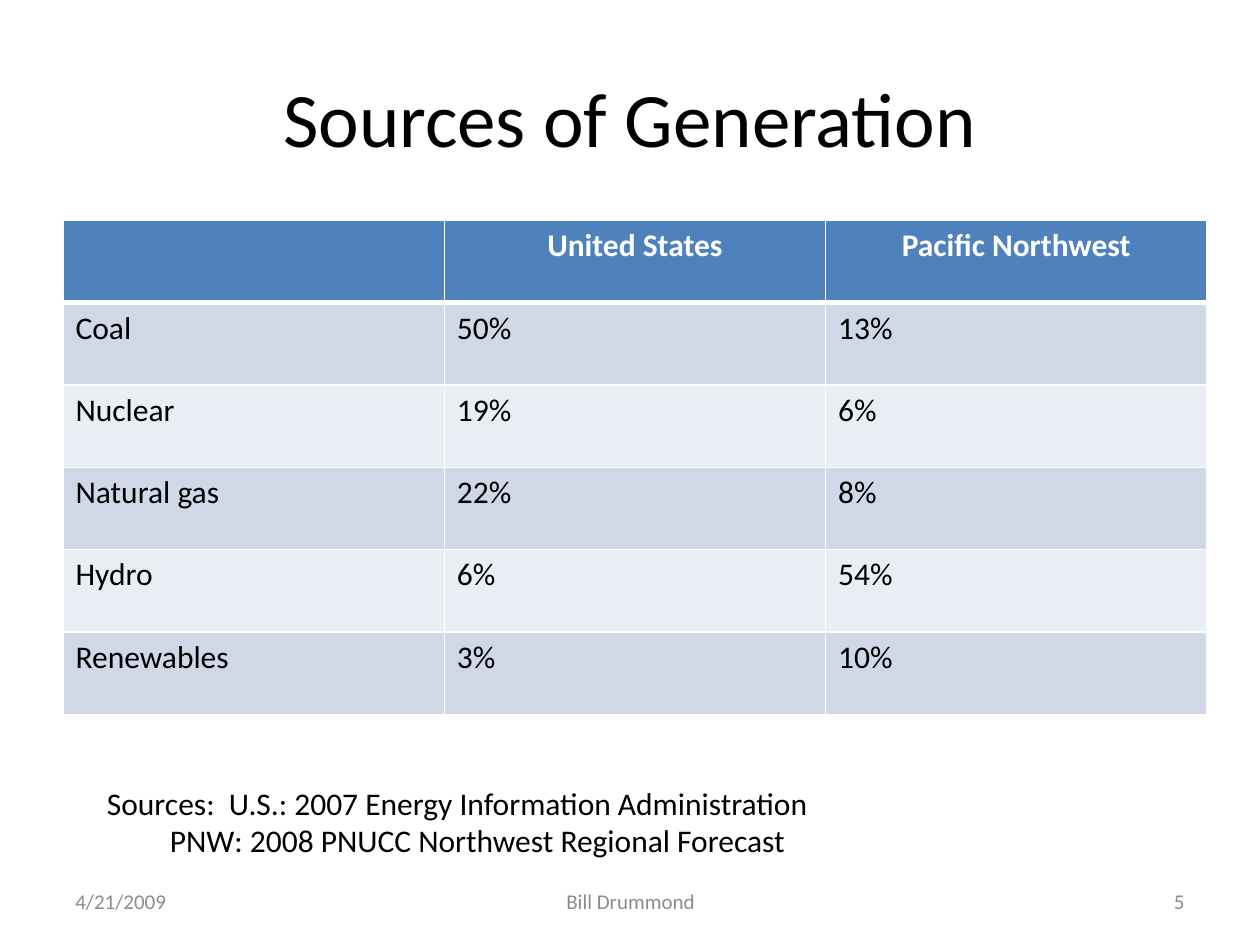
from lxml.etree import SubElement
from pptx import Presentation
from pptx.dml.color import RGBColor
from pptx.enum.text import MSO_ANCHOR, PP_ALIGN
from pptx.oxml.ns import qn
from pptx.util import Inches, Pt

# Content
TITLE = "Sources of Generation"
ROWS = [
    ("", "United States", "Pacific Northwest"),
    ("Coal", "50%", "13%"),
    ("Nuclear", "19%", "6%"),
    ("Natural gas", "22%", "8%"),
    ("Hydro", "6%", "54%"),
    ("Renewables", "3%", "10%"),
]
SOURCES = [
    "Sources:  U.S.: 2007 Energy Information Administration",
    "\tPNW: 2008 PNUCC Northwest Regional Forecast",
]
FOOTER = [  # text, left, width, alignment
    ("4/21/2009", 0.5, 2.33, PP_ALIGN.LEFT),
    ("Bill Drummond", 3.42, 3.17, PP_ALIGN.CENTER),
    ("5", 7.17, 2.33, PP_ALIGN.RIGHT),
]
HEADER_FILL, BAND_FILLS = "4F81BD", ("D0D8E8", "E9EDF4")
BLACK, WHITE, GRAY = "000000", "FFFFFF", "8C8C8C"


def rgb(color):
    return RGBColor.from_string(color)


def write(tf, lines, size=18, color=BLACK, bold=False, align=PP_ALIGN.LEFT):
    for i, line in enumerate(lines):
        p = tf.paragraphs[0] if i == 0 else tf.add_paragraph()
        p.alignment = align
        p.font.size = Pt(size)
        r = p.add_run()
        r.text = line
        r.font.name, r.font.size, r.font.bold = "Calibri", Pt(size), bold
        r.font.color.rgb = rgb(color)


def add_text(s, box, lines, anchor=MSO_ANCHOR.MIDDLE, **fmt):
    tf = s.shapes.add_textbox(*map(Inches, box)).text_frame
    tf.word_wrap = True
    tf.vertical_anchor = anchor
    write(tf, lines, **fmt)


def set_borders(cell, **widths):
    for side in "LRTB":
        ln = SubElement(cell._tc.get_or_add_tcPr(), qn(f"a:ln{side}"),
                        w=str(Pt(widths.get(side, 1))))
        fill = SubElement(ln, qn("a:solidFill"))
        SubElement(fill, qn("a:srgbClr"), val=WHITE)


prs = Presentation()
prs.slide_width, prs.slide_height = Inches(10), Inches(7.5)
s = prs.slides.add_slide(prs.slide_layouts[6])

# Title
add_text(s, (0.5, 0.3, 9, 1.25), [TITLE], size=44, align=PP_ALIGN.CENTER)

# Table: thick rule under the header, banded body rows
table = s.shapes.add_table(len(ROWS), len(ROWS[0]), Inches(0.5), Inches(1.75),
                           Inches(9.08), Inches(3.92)).table
for i, row in enumerate(ROWS):
    header = i == 0
    rules = {0: {"B": 3}, 1: {"T": 3}}.get(i, {})
    for j, text in enumerate(row):
        cell = table.cell(i, j)
        set_borders(cell, **rules)
        cell.fill.solid()
        cell.fill.fore_color.rgb = rgb(HEADER_FILL if header else BAND_FILLS[(i - 1) % 2])
        if text:
            write(cell.text_frame, [text], color=WHITE if header else BLACK, bold=header,
                  align=PP_ALIGN.CENTER if header else PP_ALIGN.LEFT)

# Source notes
add_text(s, (0.75, 6.17, 7.25, 0.71), SOURCES, anchor=MSO_ANCHOR.TOP)

# Footer
for text, left, width, align in FOOTER:
    add_text(s, (left, 6.95, width, 0.4), [text], size=12, color=GRAY, align=align)

prs.save("out.pptx")
